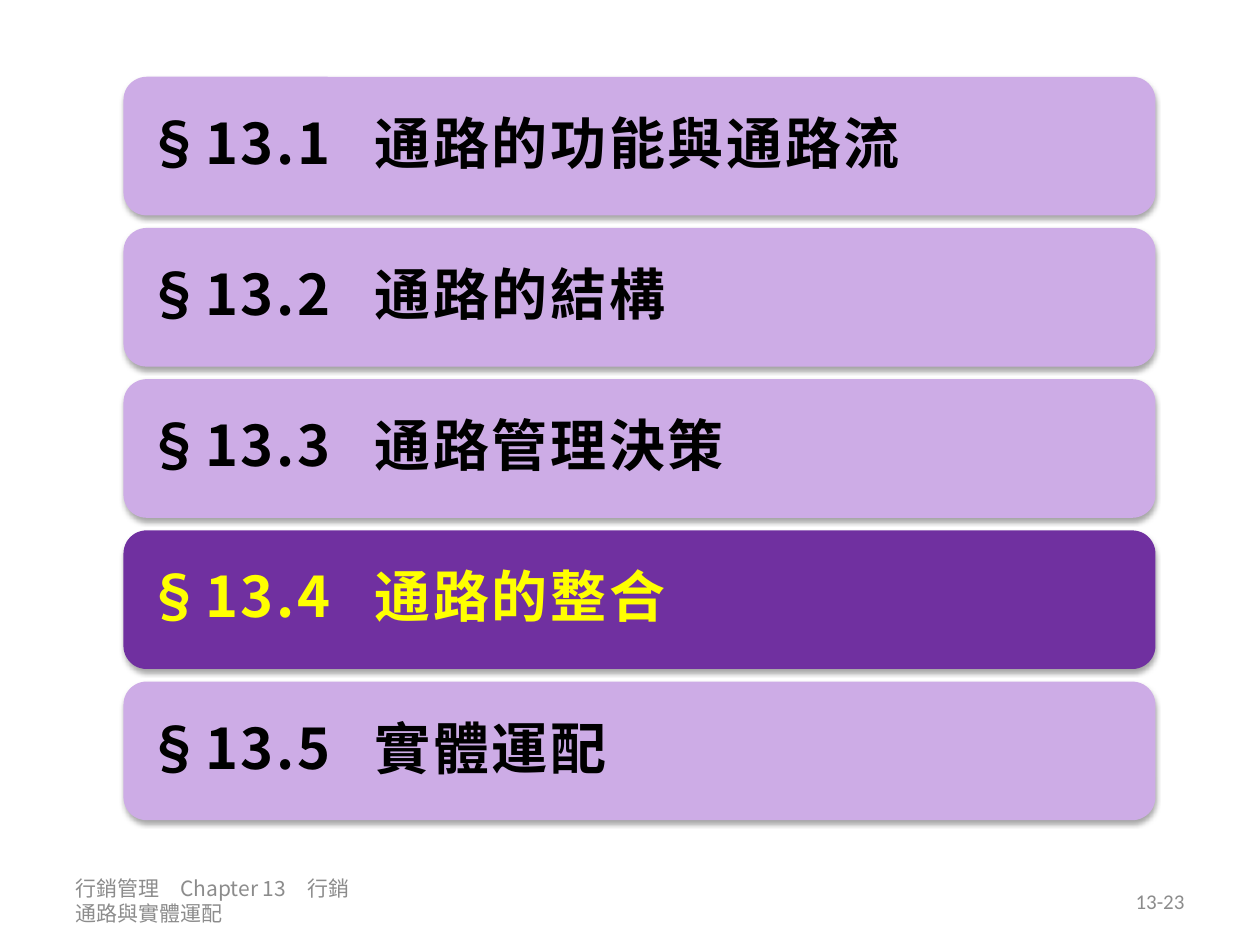
from lxml.etree import SubElement
from pptx import Presentation
from pptx.dml.color import RGBColor
from pptx.enum.shapes import MSO_SHAPE as Shape
from pptx.enum.text import MSO_ANCHOR as Anchor, PP_ALIGN as Align
from pptx.oxml.ns import qn
from pptx.util import Emu, Inches, Pt

# Content
SECTIONS = [
    ("§13.1", "通路的功能與通路流"),
    ("§13.2", "通路的結構"),
    ("§13.3", "通路管理決策"),
    ("§13.4", "通路的整合"),
    ("§13.5", "實體運配"),
]
CURRENT = "§13.4"
FOOTER = "行銷管理　Chapter 13　行銷通路與實體運配"
PAGE_NUMBER = "13-23"

# Style
COLORS = {"bar": "CDACE6", "current_bar": "7030A0", "text": "000000",
          "current_text": "FFFF00", "footer": "8C8C8C", "shadow": "000000"}
CJK, LATIN = "Noto Sans CJK SC", "Calibri"

# Layout in inches
WIDTH, HEIGHT = 10, 7.5
BAR_LEFT, BAR_TOP, BAR_WIDTH, BAR_HEIGHT = 0.98, 0.61, 8.19, 1.1
ROW_PITCH = 1.2
TITLE_TAB = 1.81
MARGIN, FOOTER_TOP, FOOTER_HEIGHT = 0.5, 6.95, 0.4


def write(shape, runs, *, size, color, bold=False, spacing=0, tab=None,
          align=Align.LEFT, inset=(0.1, 0.05), line_spacing=None, after=0):
    """Fill a shape with one paragraph of (text, font) runs."""
    frame = shape.text_frame
    frame.word_wrap = True
    frame.vertical_anchor = Anchor.MIDDLE
    frame.margin_left = frame.margin_right = Inches(inset[0])
    frame.margin_top = frame.margin_bottom = Inches(inset[1])
    paragraph = frame.paragraphs[0]
    paragraph.alignment = align
    paragraph.space_after = Pt(after)
    if line_spacing:
        paragraph.line_spacing = line_spacing
    if tab:
        tabs = SubElement(paragraph._p.get_or_add_pPr(), qn("a:tabLst"))
        SubElement(tabs, qn("a:tab"), pos=str(Inches(tab)), algn="l")
    for text, font_name in runs:
        run = paragraph.add_run()
        run.text = text
        run.font.name = font_name
        run.font.size = Pt(size)
        run.font.bold = bold
        run.font.color.rgb = RGBColor.from_string(color)
        properties = run._r.get_or_add_rPr()
        properties.set("spc", str(int(spacing * 100)))
        SubElement(properties, qn("a:ea"), typeface=CJK)


def add_shadow(shape):
    """Cast a soft shadow straight down."""
    shape.shadow.inherit = False
    effects = shape._element.spPr.find(qn("a:effectLst"))
    shadow = SubElement(effects, qn("a:outerShdw"), blurRad=str(Pt(3.1)),
                        dist=str(Pt(1.8)), dir=str(90 * 60000), rotWithShape="0")
    color = SubElement(shadow, qn("a:srgbClr"), val=COLORS["shadow"])
    SubElement(color, qn("a:alpha"), val="35000")


def add_section(slide, row, number, title):
    prefix = "current_" if number == CURRENT else ""
    bar = slide.shapes.add_shape(
        Shape.ROUNDED_RECTANGLE, Inches(BAR_LEFT),
        Inches(BAR_TOP + row * ROW_PITCH), Inches(BAR_WIDTH), Inches(BAR_HEIGHT))
    bar.fill.solid()
    bar.fill.fore_color.rgb = RGBColor.from_string(COLORS[prefix + "bar"])
    bar.line.fill.background()
    add_shadow(bar)
    write(bar, [(number + "\t", CJK), (title, LATIN)], size=32, bold=True,
          color=COLORS[prefix + "text"], spacing=1.5, tab=TITLE_TAB,
          inset=(0.13, 0.13), line_spacing=0.9, after=11)


def add_footer(slide, text, font, left, width, align):
    box = slide.shapes.add_textbox(Inches(left), Inches(FOOTER_TOP),
                                   Inches(width), Inches(FOOTER_HEIGHT))
    write(box, [(text, font)], size=12, color=COLORS["footer"], align=align)


def main():
    presentation = Presentation()
    presentation.slide_width = Inches(WIDTH)
    presentation.slide_height = Inches(HEIGHT)
    slide = presentation.slides.add_slide(presentation.slide_layouts[6])

    # Footer and page number
    add_footer(slide, FOOTER, CJK, MARGIN, 2.45, Align.LEFT)
    add_footer(slide, PAGE_NUMBER, LATIN, WIDTH - MARGIN - 2.33, 2.33, Align.RIGHT)

    # Section bars
    for row, (number, title) in enumerate(SECTIONS):
        add_section(slide, row, number, title)

    presentation.save("out.pptx")


if __name__ == "__main__":
    main()
